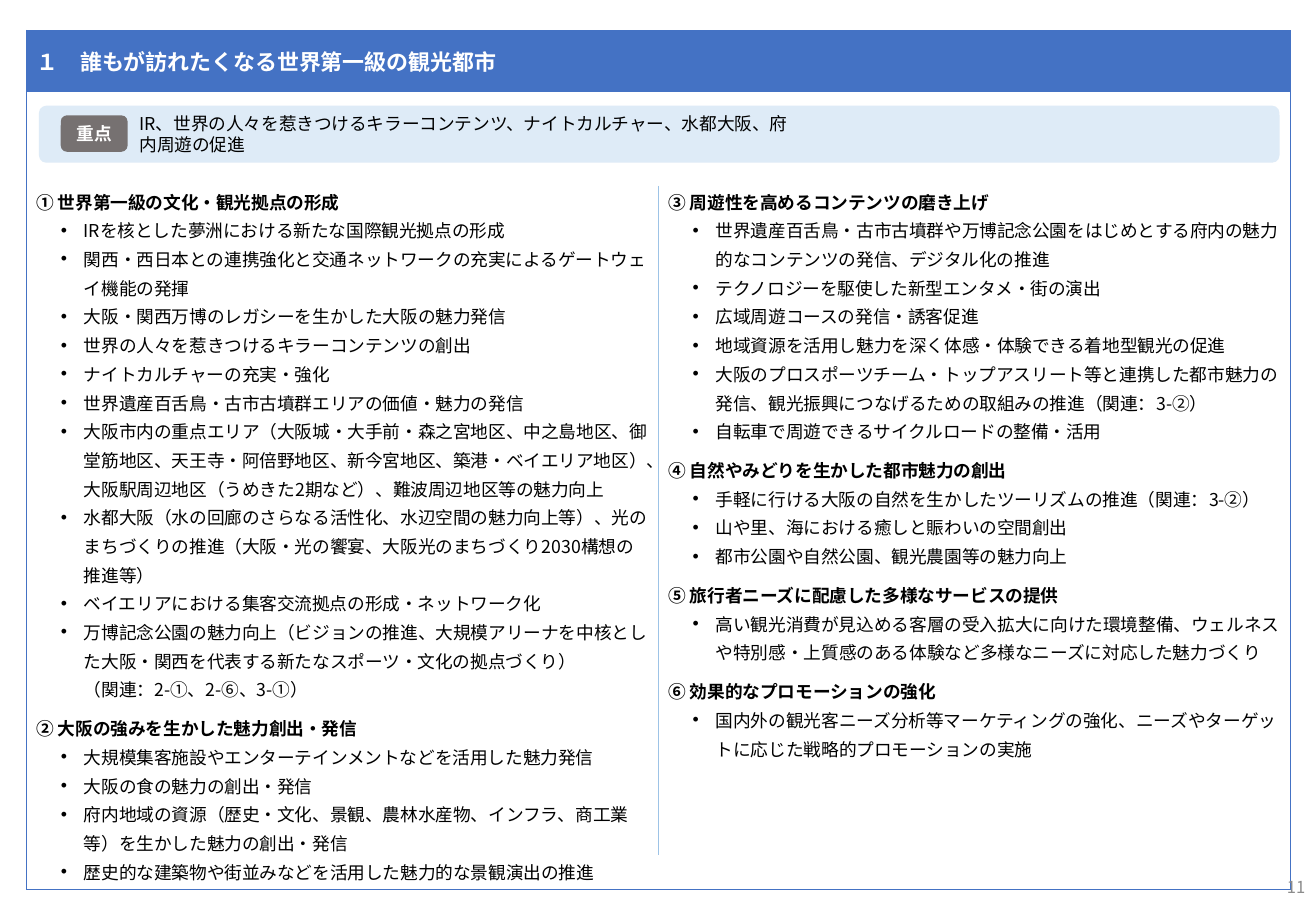
from lxml import etree
from pptx import Presentation
from pptx import util as u
from pptx.dml.color import RGBColor
from pptx.enum import shapes, text
from pptx.oxml import ns

PX = 9144
FONT = "Noto Sans CJK JP"
BLUE = "4472C4"


def paint(target, color):
    target.solid()
    target.fore_color.rgb = RGBColor.from_string(color)


def write(para, content, size=10.5, color="000000", bold=False, align=None,
          spacing=None, after=0, bullet=False):
    para.alignment = align
    para.space_after = u.Pt(after)
    if spacing:
        para.line_spacing = u.Pt(spacing)
    if bullet:
        props = para._p.get_or_add_pPr()
        props.set("marL", str(39 * PX))
        props.set("indent", str(-19 * PX))
        etree.SubElement(props, ns.qn("a:buFont"), typeface="Arial")
        etree.SubElement(props, ns.qn("a:buChar"), char="•")
    for index, line in enumerate(content.split("\n")):
        if index:
            para.add_line_break()
        span = para.add_run()
        span.text = line
        span.font.size = u.Pt(size)
        span.font.bold = bold
        span.font.name = FONT
        paint(span.font.fill, color)
        etree.SubElement(span._r.get_or_add_rPr(), ns.qn("a:ea"), typeface=FONT)


columns = [
    [
        ("① 世界第一級の文化・観光拠点の形成", [
            "IRを核とした夢洲における新たな国際観光拠点の形成",
            "関西・西日本との連携強化と交通ネットワークの充実によるゲートウェイ機能の発揮",
            "大阪・関西万博のレガシーを生かした大阪の魅力発信",
            "世界の人々を惹きつけるキラーコンテンツの創出",
            "ナイトカルチャーの充実・強化",
            "世界遺産百舌鳥・古市古墳群エリアの価値・魅力の発信",
            "大阪市内の重点エリア（大阪城・大手前・森之宮地区、中之島地区、御堂筋地区、天王寺・阿倍野地区、新今宮地区、築港・ベイエリア地区）、大阪駅周辺地区（うめきた2期など）、難波周辺地区等の魅力向上",
            "水都大阪（水の回廊のさらなる活性化、水辺空間の魅力向上等）、光のまちづくりの推進（大阪・光の饗宴、大阪光のまちづくり2030構想の推進等）",
            "ベイエリアにおける集客交流拠点の形成・ネットワーク化",
            "万博記念公園の魅力向上（ビジョンの推進、大規模アリーナを中核とした大阪・関西を代表する新たなスポーツ・文化の拠点づくり）\n（関連：2-①、2-⑥、3-①）",
        ]),
        ("② 大阪の強みを生かした魅力創出・発信", [
            "大規模集客施設やエンターテインメントなどを活用した魅力発信",
            "大阪の食の魅力の創出・発信",
            "府内地域の資源（歴史・文化、景観、農林水産物、インフラ、商工業等）を生かした魅力の創出・発信",
            "歴史的な建築物や街並みなどを活用した魅力的な景観演出の推進",
        ]),
    ],
    [
        ("③ 周遊性を高めるコンテンツの磨き上げ", [
            "世界遺産百舌鳥・古市古墳群や万博記念公園をはじめとする府内の魅力的なコンテンツの発信、デジタル化の推進",
            "テクノロジーを駆使した新型エンタメ・街の演出",
            "広域周遊コースの発信・誘客促進",
            "地域資源を活用し魅力を深く体感・体験できる着地型観光の促進",
            "大阪のプロスポーツチーム・トップアスリート等と連携した都市魅力の発信、観光振興につなげるための取組みの推進（関連：3-②）",
            "自転車で周遊できるサイクルロードの整備・活用",
        ]),
        ("④ 自然やみどりを生かした都市魅力の創出", [
            "手軽に行ける大阪の自然を生かしたツーリズムの推進（関連：3-②）",
            "山や里、海における癒しと賑わいの空間創出",
            "都市公園や自然公園、観光農園等の魅力向上",
        ]),
        ("⑤ 旅行者ニーズに配慮した多様なサービスの提供", [
            "高い観光消費が見込める客層の受入拡大に向けた環境整備、ウェルネスや特別感・上質感のある体験など多様なニーズに対応した魅力づくり",
        ]),
        ("⑥ 効果的なプロモーションの強化", [
            "国内外の観光客ニーズ分析等マーケティングの強化、ニーズやターゲットに応じた戦略的プロモーションの実施",
        ]),
    ],
]

deck = Presentation()
deck.slide_width, deck.slide_height = 1083 * PX, 750 * PX
page = deck.slides.add_slide(deck.slide_layouts[6])

table = page.shapes.add_table(2, 2, 22 * PX, 25 * PX, 1040 * PX, 692 * PX).table
table.first_row = table.horz_banding = False
table.rows[0].height, table.rows[1].height = 50 * PX, 642 * PX

for row, col, sides in [(0, 0, "LT"), (0, 1, "RT"), (1, 0, "LTB"), (1, 1, "RTB")]:
    cell = table.cell(row, col)
    cell.margin_left = cell.margin_right = 8 * PX
    cell.margin_top = cell.margin_bottom = 4 * PX
    props = cell._tc.get_or_add_tcPr()
    for side in "LRTB":
        border = etree.SubElement(props, ns.qn(f"a:ln{side}"), w=str(u.Pt(0.5)))
        if side in sides:
            color = etree.SubElement(border, ns.qn("a:solidFill"))
            etree.SubElement(color, ns.qn("a:srgbClr"), val=BLUE)
        else:
            etree.SubElement(border, ns.qn("a:noFill"))
    if row == 0:
        paint(cell.fill, BLUE)
    else:
        cell.fill.background()

header = table.cell(0, 0)
header.merge(table.cell(0, 1))
header.vertical_anchor = text.MSO_ANCHOR.MIDDLE
write(header.text_frame.paragraphs[0], "１　誰もが訪れたくなる世界第一級の観光都市",
      size=13, color="FFFFFF", bold=True)

for col, sections in enumerate(columns):
    cell = table.cell(1, col)
    cell.margin_top = 82 * PX
    frame = cell.text_frame
    for number, (heading, items) in enumerate(sections):
        para = frame.add_paragraph() if number else frame.paragraphs[0]
        write(para, heading, bold=True, spacing=17 if number else 14)
        for item in items:
            closing = item == items[-1] and number < len(sections) - 1
            write(frame.add_paragraph(), item, spacing=17, bullet=True,
                  after=6 if closing else 0)

panels = []
for left, top, width, height, fill, radius in [
    (32, 87, 1021, 47, "DEEBF7", 0.13),
    (50, 95, 55, 30, "767171", 0.17),
]:
    panel = page.shapes.add_shape(shapes.MSO_SHAPE.ROUNDED_RECTANGLE,
                                  left * PX, top * PX, width * PX, height * PX)
    panel.adjustments[0] = radius
    panel.shadow.inherit = False
    paint(panel.fill, fill)
    panel.line.fill.background()
    panels.append(panel)

badge = panels[1].text_frame
badge.margin_left = badge.margin_right = 0
badge.vertical_anchor = text.MSO_ANCHOR.MIDDLE
write(badge.paragraphs[0], "重点", color="FFFFFF", bold=True, align=text.PP_ALIGN.CENTER)

for left, top, width, height, content, style in [
    (105, 90, 560, 41,
     "IR、世界の人々を惹きつけるキラーコンテンツ、ナイトカルチャー、水都大阪、府内周遊の促進", {}),
    (840, 710, 244, 40, "11",
     {"size": 9.8, "color": "8C8C8C", "align": text.PP_ALIGN.RIGHT}),
]:
    box = page.shapes.add_textbox(left * PX, top * PX, width * PX, height * PX)
    box.text_frame.word_wrap = True
    box.text_frame.vertical_anchor = text.MSO_ANCHOR.MIDDLE
    write(box.text_frame.paragraphs[0], content, **style)

divider = page.shapes.add_connector(shapes.MSO_CONNECTOR.STRAIGHT,
                                    542 * PX, 153 * PX, 542 * PX, 704 * PX)
paint(divider.line.fill, "9DC3E6")
divider.line.width = u.Pt(0.5)
etree.SubElement(divider._element.spPr, ns.qn("a:effectLst"))

deck.save("out.pptx")
